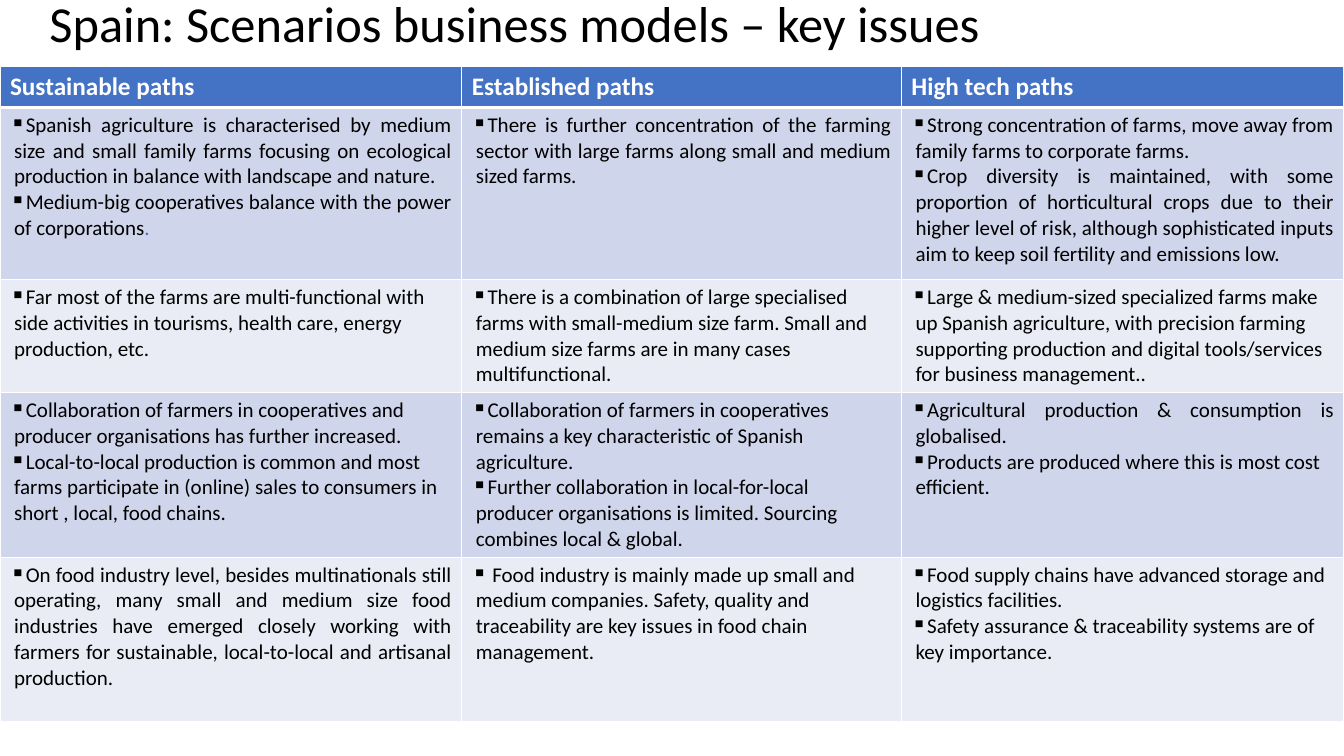
from lxml.etree import SubElement as add_element
from pptx import Presentation
from pptx.dml.color import RGBColor
from pptx.enum.text import MSO_ANCHOR as Anchor, MSO_AUTO_SIZE as AutoSize, PP_ALIGN as Align
from pptx.oxml.ns import qn
from pptx.util import Inches, Pt

BLACK = RGBColor(0x00, 0x00, 0x00)
WHITE = RGBColor(0xFF, 0xFF, 0xFF)
BLUE = RGBColor(0x44, 0x72, 0xC4)
BAND_DARK = RGBColor(0xCF, 0xD5, 0xEA)
BAND_LIGHT = RGBColor(0xE9, 0xEB, 0xF5)

LEFT, JUSTIFY = Align.LEFT, Align.JUSTIFY
COLUMN_SHARES = [34.36, 32.71, 32.93]
ROW_SHARES = [5.33, 22.8, 14.93, 21.73, 21.73]
HEADERS = ["Sustainable paths", "Established paths", "High tech paths"]
ISSUES = [
    [
        [
            (JUSTIFY, "Spanish agriculture is characterised by medium size and small family farms "
                      "focusing on ecological production in balance with landscape and nature. "),
            (JUSTIFY, "Medium-big cooperatives balance with the power of corporations", (".", BLUE)),
        ],
        [(JUSTIFY, "There is further concentration of the farming sector with large farms along "
                   "small and medium sized farms. ")],
        [
            (LEFT, "Strong concentration of farms, move away from family farms to corporate farms."),
            (JUSTIFY, "Crop diversity is maintained, with some proportion of horticultural crops due "
                      "to their higher level of risk, although sophisticated inputs aim to keep soil "
                      "fertility and emissions low."),
        ],
    ],
    [
        [(LEFT, "Far most of the farms are multi-functional with side activities in tourisms, "
                "health care, energy production, etc.")],
        [(LEFT, "There is a combination of large specialised farms with small-medium size farm. "
                "Small and medium size farms are in many cases multifunctional.")],
        [(LEFT, "Large & medium-sized specialized farms make up Spanish agriculture, with precision "
                "farming supporting production and digital tools/services for business management..")],
    ],
    [
        [
            (LEFT, "Collaboration of farmers in cooperatives and producer organisations has further "
                   "increased."),
            (LEFT, "Local-to-local production is common and most farms participate in (online) sales "
                   "to consumers in short , local, food chains."),
        ],
        [
            (LEFT, "Collaboration of farmers in cooperatives remains a key characteristic of Spanish "
                   "agriculture."),
            (LEFT, "Further collaboration in local-for-local producer organisations is limited. "
                   "Sourcing combines local & global."),
        ],
        [
            (JUSTIFY, "Agricultural production & consumption is globalised."),
            (LEFT, "Products are produced where this is most cost efficient."),
        ],
    ],
    [
        [(JUSTIFY, "On food industry level, besides multinationals still operating, many small and "
                   "medium size food industries have emerged closely working with farmers for "
                   "sustainable, local-to-local and artisanal production. ")],
        [(LEFT, " Food industry is mainly made up small and medium companies. Safety, quality and "
                "traceability are key issues in food chain management.")],
        [
            (LEFT, "Food supply chains have advanced storage and logistics facilities."),
            (LEFT, "Safety assurance & traceability systems are of key importance."),
        ],
    ],
]


class SlideBuilder:
    """Holds the deck, its style and the current page; lengths are percent of the page."""

    font = "Calibri"
    bullet = "▪"
    hang = Inches(0.04)

    def __init__(self):
        self.deck = Presentation()
        self.deck.slide_width, self.deck.slide_height = Inches(13.33), Inches(7.5)
        self.page = self.deck.slides.add_slide(self.deck.slide_layouts[5])

    def across(self, share):
        return round(self.deck.slide_width * share / 100)

    def down(self, share):
        return round(self.deck.slide_height * share / 100)

    def span(self, para, text, size, color, bold=False):
        span = para.add_run()
        span.text = text
        span.font.name, span.font.size, span.font.bold = self.font, Pt(size), bold
        span.font.color.rgb = color

    def title(self, text, left, top, width, height):
        box = self.page.shapes.title
        box.left, box.top = self.across(left), self.down(top)
        box.width, box.height = self.across(width), self.down(height)
        frame = box.text_frame
        frame.auto_size, frame.vertical_anchor = AutoSize.NONE, Anchor.MIDDLE
        para = frame.paragraphs[0]
        para.alignment, para.line_spacing = LEFT, 0.9
        self.span(para, text, 36, BLACK)

    def bullet_item(self, para, align, *parts):
        para.alignment = align
        props = para._p.get_or_add_pPr()
        props.set("marL", str(self.hang))
        props.set("indent", str(-self.hang))
        add_element(props, qn("a:buChar"), char=self.bullet)
        for part in parts:
            text, color = (part, BLACK) if isinstance(part, str) else part
            self.span(para, text, 15, color)

    def paint(self, cell, fill, bottom=1):
        props = cell._tc.get_or_add_tcPr()
        for side, width in zip("LRTB", (1, 1, 1, bottom)):
            line = add_element(props, qn(f"a:ln{side}"), w=str(Pt(width)))
            add_element(add_element(line, qn("a:solidFill")), qn("a:srgbClr"), val=str(WHITE))
        cell.fill.solid()
        cell.fill.fore_color.rgb = fill

    def table(self, top, columns, rows, headers, body):
        grid = self.page.shapes.add_table(
            len(rows), len(columns), 0, self.down(top),
            self.across(sum(columns)), self.down(sum(rows))).table
        for column, share in zip(grid.columns, columns):
            column.width = self.across(share)
        for row, share in zip(grid.rows, rows):
            row.height = self.down(share)
        for cell, text in zip(grid.rows[0].cells, headers):
            self.paint(cell, BLUE, bottom=3)
            self.span(cell.text_frame.paragraphs[0], text, 18, WHITE, bold=True)
        for number, issues in enumerate(body, 1):
            for cell, items in zip(grid.rows[number].cells, issues):
                self.paint(cell, BAND_DARK if number % 2 else BAND_LIGHT)
                frame = cell.text_frame
                for index, item in enumerate(items):
                    para = frame.add_paragraph() if index else frame.paragraphs[0]
                    self.bullet_item(para, *item)


def main():
    builder = SlideBuilder()
    builder.title("Spain: Scenarios business models – key issues", 2.93, -1.07, 91.6, 9.2)
    builder.table(8.8, COLUMN_SHARES, ROW_SHARES, HEADERS, ISSUES)
    builder.deck.save("out.pptx")


if __name__ == "__main__":
    main()
